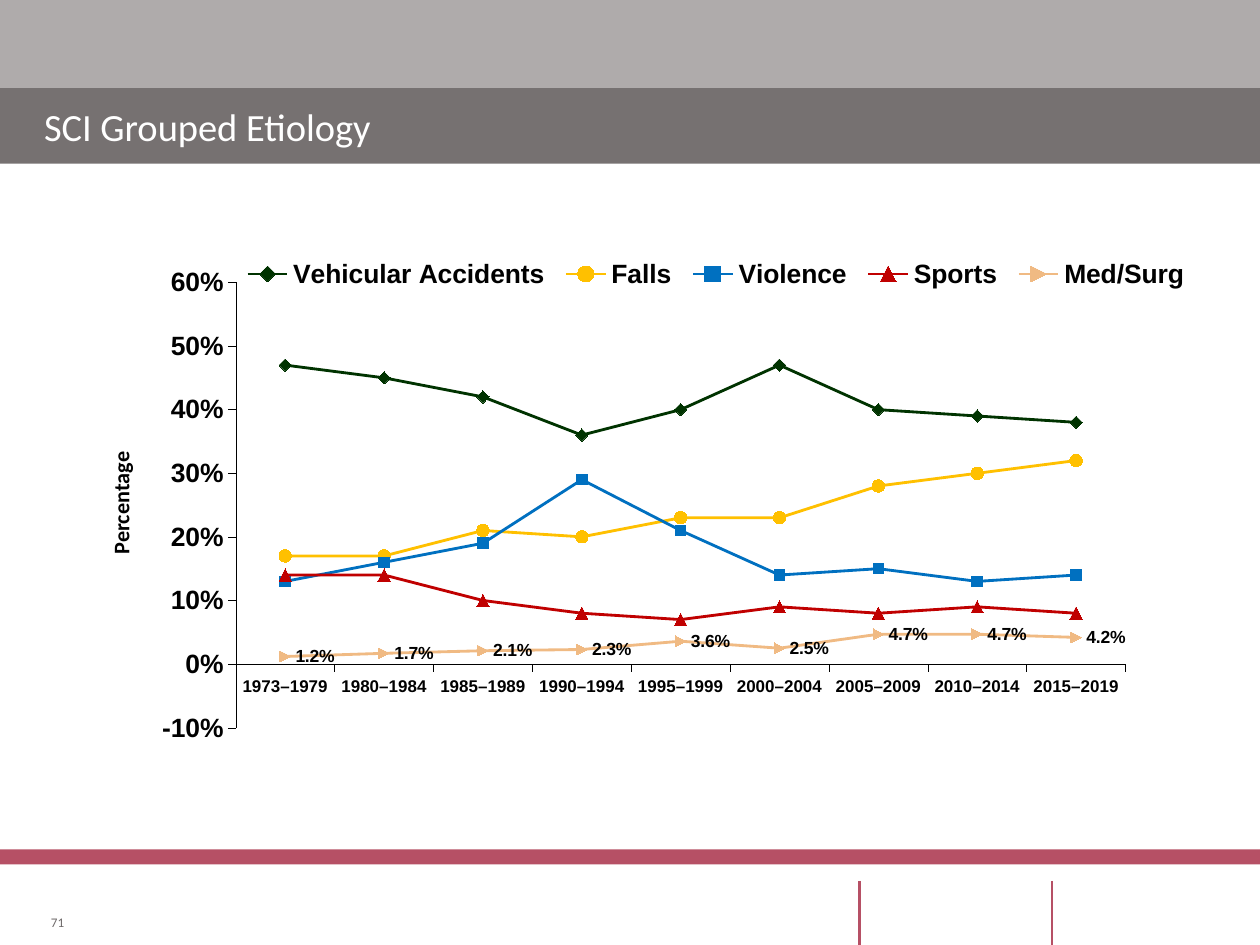
from dataclasses import dataclass

import pptx
import pptx.chart.data
import pptx.dml.color
import pptx.enum.chart
import pptx.enum.shapes
import pptx.enum.text
import pptx.oxml
import pptx.util
from pptx.oxml import ns

Pt = pptx.util.Pt
MARKER = pptx.enum.chart.XL_MARKER_STYLE
ALIGN = pptx.enum.text.PP_ALIGN
ANCHOR = pptx.enum.text.MSO_ANCHOR


@dataclass(frozen=True)
class Theme:
    """Colours, fonts and type sizes of the slide."""
    top: str = "AFABAB"
    band: str = "767171"
    accent: str = "B65065"
    white: str = "FFFFFF"
    black: str = "000000"
    muted: str = "6F6A6A"
    text_font: str = "Calibri"
    chart_font: str = "Arial"
    title: float = 22
    chart: float = 15.1
    axis_title: float = 12.7
    labels: float = 10
    categories: float = 9.7
    number: float = 7.5


THEME = Theme()
PERIODS = ["1973–1979", "1980–1984", "1985–1989", "1990–1994", "1995–1999",
           "2000–2004", "2005–2009", "2010–2014", "2015–2019"]
SERIES = [
    ("Vehicular Accidents", "003300", MARKER.DIAMOND, 7,
     (0.47, 0.45, 0.42, 0.36, 0.4, 0.47, 0.4, 0.39, 0.38)),
    ("Falls", "FFC000", MARKER.CIRCLE, 7,
     (0.17, 0.17, 0.21, 0.2, 0.23, 0.23, 0.28, 0.3, 0.32)),
    ("Violence", "0070C0", MARKER.SQUARE, 6,
     (0.13, 0.16, 0.19, 0.29, 0.21, 0.14, 0.15, 0.13, 0.14)),
    ("Sports", "C00000", MARKER.TRIANGLE, 7,
     (0.14, 0.14, 0.1, 0.08, 0.07, 0.09, 0.08, 0.09, 0.08)),
    ("Med/Surg", "F0BA83", None, 6,
     (0.012, 0.017, 0.021, 0.023, 0.036, 0.025, 0.047, 0.047, 0.042)),
]


def rgb(color):
    """Return an RGBColor for a hex string."""
    return pptx.dml.color.RGBColor.from_string(color)


def set_font(font, size, name, color, bold=False):
    """Style a font."""
    font.size, font.name, font.bold = Pt(size), name, bold
    font.color.rgb = rgb(color)


def add_bar(slide, box, color):
    """Draw a plain filled rectangle."""
    sp = slide.shapes.add_shape(pptx.enum.shapes.MSO_SHAPE.RECTANGLE, *map(Pt, box))
    sp.shadow.inherit = False
    sp.fill.solid()
    sp.fill.fore_color.rgb = rgb(color)
    sp.line.fill.background()


def add_text(slide, box, text, size, color, align, anchor, inset=0, bold=False, wrap=True):
    """Place one line of text in a box and return the shape."""
    sp = slide.shapes.add_textbox(*map(Pt, box))
    tf = sp.text_frame
    tf.word_wrap, tf.vertical_anchor = wrap, anchor
    tf.margin_left = tf.margin_right = Pt(inset)
    tf.margin_top = tf.margin_bottom = 0
    p = tf.paragraphs[0]
    p.alignment = align
    r = p.add_run()
    r.text = text
    set_font(r.font, size, THEME.text_font, color, bold)
    return sp


def add_header(slide, box):
    """Draw the two top bands and the title."""
    x, y, w, h = box
    title_h = 43.2
    title_box = (x, y + h - title_h, w, title_h)
    add_bar(slide, (x, y, w, h - title_h + 0.7), THEME.top)
    add_bar(slide, title_box, THEME.band)
    add_text(slide, title_box, "SCI Grouped Etiology", THEME.title, THEME.white,
             ALIGN.LEFT, ANCHOR.MIDDLE, inset=25.2)


def add_footer(slide, box):
    """Draw the footer bar, the two dividers and the slide number."""
    x, y, w, h = box
    add_bar(slide, (x, y, w, 8.64), THEME.accent)
    for dx in (491, 601.2):
        ln = slide.shapes.add_connector(pptx.enum.shapes.MSO_CONNECTOR.STRAIGHT,
                                        Pt(x + dx), Pt(y + 18), Pt(x + dx), Pt(y + h))
        ln.line.color.rgb = rgb(THEME.accent)
        ln.line.width = Pt(1.5)
        ln._element.spPr.append(pptx.oxml.parse_xml(f"<a:effectLst {ns.nsdecls('a')}/>"))
    add_text(slide, (x + 27.4, y + 36.7, 9.4, 9.4), "71", THEME.number, THEME.muted,
             ALIGN.RIGHT, ANCHOR.BOTTOM, wrap=False)


def set_layout(element, index, box, inner=False):
    """Give a chart part a manual layout in fractions of the chart."""
    for old in element.findall(ns.qn("c:layout")):
        element.remove(old)
    target = '<c:layoutTarget val="inner"/>' if inner else ""
    modes = '<c:xMode val="edge"/><c:yMode val="edge"/>'
    sizes = "".join(f'<c:{k} val="{v}"/>' for k, v in zip("xywh", box))
    element.insert(index, pptx.oxml.parse_xml(
        f"<c:layout {ns.nsdecls('c')}><c:manualLayout>{target}{modes}{sizes}"
        "</c:manualLayout></c:layout>"))


def style_axis(axis, size):
    """Style the line, ticks and labels of an axis."""
    axis.has_major_gridlines = False
    axis.major_tick_mark = pptx.enum.chart.XL_TICK_MARK.OUTSIDE
    axis.format.line.color.rgb = rgb(THEME.black)
    axis.format.line.width = Pt(0.2)
    set_font(axis.tick_labels.font, size, THEME.chart_font, THEME.black, True)


def style_series(ser, color, symbol, size):
    """Style a line and its markers."""
    ser.smooth = False
    ser.format.line.color.rgb = rgb(color)
    ser.format.line.width = Pt(1.61)
    if symbol is not None:
        ser.marker.style = symbol
    ser.marker.size = size
    ser.marker.format.fill.solid()
    ser.marker.format.fill.fore_color.rgb = rgb(color)
    ser.marker.format.line.color.rgb = rgb(color)


def add_etiology_chart(slide, box):
    """Draw the line chart and its rotated axis title."""
    x, y, w, h = box
    data = pptx.chart.data.CategoryChartData()
    data.categories = PERIODS
    for name, *_, values in SERIES:
        data.add_series(name, values)
    chart = slide.shapes.add_chart(pptx.enum.chart.XL_CHART_TYPE.LINE_MARKERS,
                                   *map(Pt, box), data).chart
    chart.has_title = False
    set_font(chart.font, THEME.chart, THEME.chart_font, THEME.black, True)
    plot = chart.plots[0]
    plot.vary_by_categories = False
    for ser, (_, color, symbol, size, _) in zip(plot.series, SERIES):
        style_series(ser, color, symbol, size)
    labels = plot.series[-1].data_labels
    labels.show_value = True
    labels.position = pptx.enum.chart.XL_LABEL_POSITION.RIGHT
    labels.number_format, labels.number_format_is_linked = "0.0%", False
    set_font(labels.font, THEME.labels, THEME.chart_font, THEME.black, True)

    style_axis(chart.category_axis, THEME.categories)
    axis = chart.value_axis
    style_axis(axis, THEME.chart)
    axis.minimum_scale, axis.maximum_scale, axis.major_unit = -0.1, 0.6, 0.1
    axis.tick_labels.number_format = "0%"
    axis.tick_labels.number_format_is_linked = False

    chart.has_legend = True
    legend = chart.legend
    legend.position = pptx.enum.chart.XL_LEGEND_POSITION.RIGHT
    legend.include_in_layout = False
    set_font(legend.font, THEME.chart, THEME.chart_font, THEME.black, True)
    set_layout(legend._element, 1, (0.11, 0.07, 0.89, 0.07))
    set_layout(chart._chartSpace.chart.plotArea, 0, (0.111, 0.119, 0.823, 0.735), True)

    title_w, title_h = 264, 22.3
    sp = add_text(slide, (x + 2.6 - title_w / 2, y + h / 2 - 5.9 - title_h / 2, title_w, title_h),
                  "Percentage", THEME.axis_title, THEME.black, ALIGN.CENTER, ANCHOR.MIDDLE,
                  bold=True)
    sp.rotation = 270


def main():
    """Build the slide and save it."""
    prs = pptx.Presentation()
    prs.slide_width, prs.slide_height = Pt(720), Pt(540)
    slide = prs.slides.add_slide(prs.slide_layouts[6])
    add_header(slide, (0, 0, 720, 93.6))
    add_footer(slide, (0, 485.3, 720, 54.7))
    add_etiology_chart(slide, (66.2, 120.2, 617.8, 346.3))
    prs.save("out.pptx")


if __name__ == "__main__":
    main()
